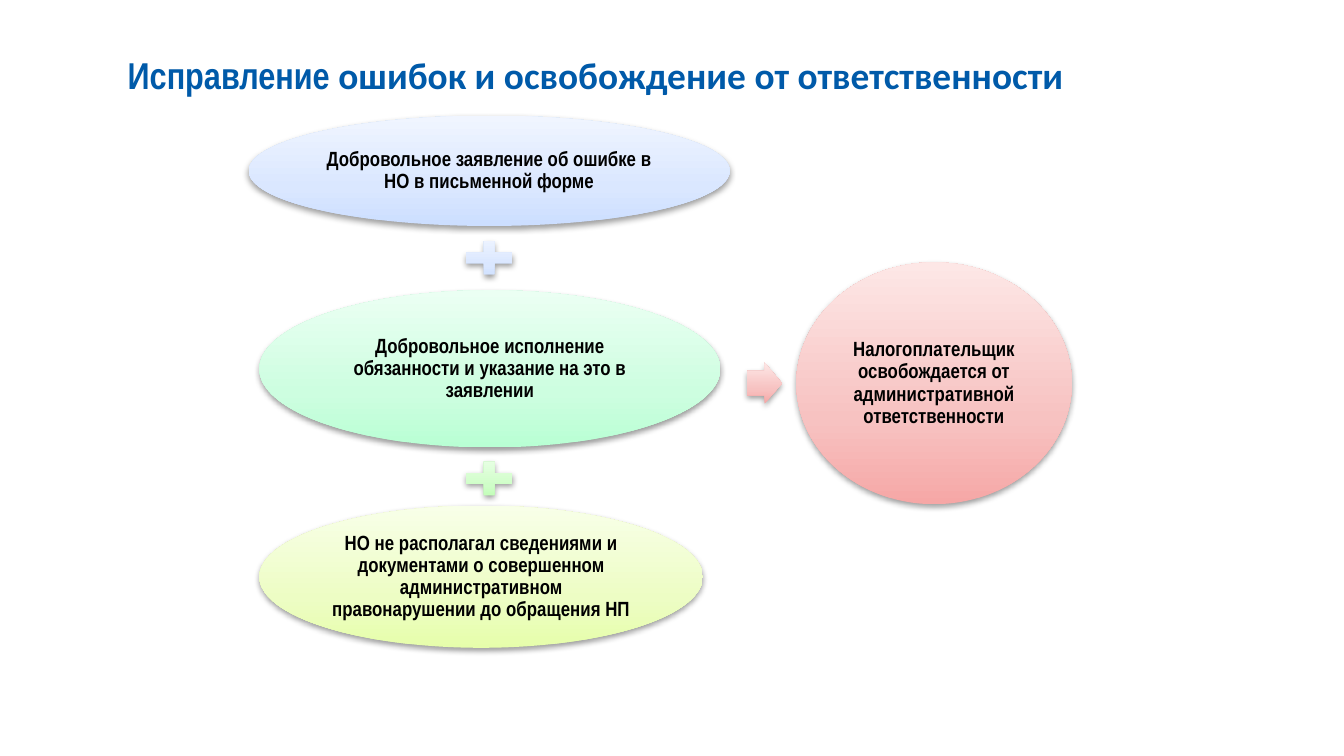
from collections import namedtuple

from lxml.etree import SubElement
from pptx import Presentation
from pptx.dml.color import RGBColor
from pptx.enum.shapes import MSO_SHAPE as Shape
from pptx.enum.text import MSO_ANCHOR as Anchor, MSO_AUTO_SIZE as AutoSize, PP_ALIGN as Align
from pptx.oxml import parse_xml
from pptx.oxml.ns import nsdecls, qn
from pptx.util import Inches, Pt

WIDTH = Inches(10)
HEIGHT = WIDTH * 9 // 16
COLUMN, ROW = WIDTH / 100, HEIGHT / 100
INSCRIBED = 0.5 ** 0.5  # share of an ellipse taken by the rectangle inside it

COLORS = {"title": "005AA9", "text": "000000", "shadow": "000000"}
GRADIENTS = {
    "blue": ("CCDEFF", "DAE7FF", "F0F5FF"),
    "mint": ("B9FFD4", "CDFEE0", "EBFFF3"),
    "green": ("BCFEB1", "CFFEC8", "ECFFE9"),
    "lime": ("E6FEAB", "EDFDC4", "F8FFE8"),
    "red": ("F6A7A6", "F7C2C1", "FDE7E6"),
}

Box = namedtuple("Box", "left top width height")


def inside(box, left, top, width, height):
    """Return a box placed relative to the corner of another, in columns and rows."""
    return Box(box.left + left, box.top + top, width, height)


def to_lengths(box):
    return (round(box.left * COLUMN), round(box.top * ROW),
            round(box.width * COLUMN), round(box.height * ROW))


def write_text(frame, spans, size, color, align, margins, before=0, after=0, line=1.0):
    """Fill a frame with one bold paragraph made of (text, font name) spans."""
    frame.word_wrap = True
    frame.auto_size = AutoSize.NONE
    frame.vertical_anchor = Anchor.MIDDLE
    frame.margin_left = frame.margin_right = Inches(margins[0])
    frame.margin_top = frame.margin_bottom = Inches(margins[1])
    para = frame.paragraphs[0]
    para.alignment = align
    para.line_spacing = line
    para.space_before, para.space_after = Pt(before), Pt(after)
    for text, font_name in spans:
        span = para.add_run()
        span.text = text
        span.font.name = font_name
        span.font.size = Pt(size)
        span.font.bold = True
        span.font.color.rgb = RGBColor.from_string(COLORS[color])


def add_glossy_shape(group, kind, box, gradient):
    """Add a shape with a vertical gradient, no outline and a soft shadow."""
    shape = group.shapes.add_shape(kind, *to_lengths(box))
    shape.line.fill.background()
    stops = "".join(
        f'<a:gs pos="{position}"><a:srgbClr val="{color}"/></a:gs>'
        for position, color in zip((0, 35000, 100000), GRADIENTS[gradient]))
    properties = shape.element.spPr
    properties.find(qn("a:prstGeom")).addnext(parse_xml(
        f'<a:gradFill {nsdecls("a")} rotWithShape="1"><a:gsLst>{stops}</a:gsLst>'
        '<a:lin ang="16200000" scaled="0"/></a:gradFill>'))
    effects = SubElement(properties, qn("a:effectLst"))
    shadow = SubElement(effects, qn("a:outerShdw"), blurRad="40000", dist="20000",
                        dir="5400000", rotWithShape="0")
    color = SubElement(shadow, qn("a:srgbClr"), val=COLORS["shadow"])
    SubElement(color, qn("a:alpha"), val="38000")
    return shape


def add_labelled_ellipse(group, box, text, gradient):
    add_glossy_shape(group, Shape.OVAL, box, gradient)
    width, height = box.width * INSCRIBED, box.height * INSCRIBED
    label_box = inside(box, (box.width - width) / 2, (box.height - height) / 2, width, height)
    label = group.shapes.add_textbox(*to_lengths(label_box))
    write_text(label.text_frame, [(text, "Arial Narrow")], size=11, color="text",
               align=Align.CENTER, margins=(0.02, 0.02), after=3.85, line=0.9)


def add_title(page, box):
    title = page.shapes.title
    title.left, title.top, title.width, title.height = to_lengths(box)
    spans = [("Исправление", "Arial Narrow"),
             (" ошибок и освобождение от ответственности", "Calibri")]
    write_text(title.text_frame, spans, size=20, color="title",
               align=Align.LEFT, margins=(0.09, 0.04), before=4, after=4)


def add_conditions(group, box):
    """Stack the three conditions, with a plus sign between neighbours."""
    conditions = [
        ("Добровольное заявление об ошибке в НО в письменной форме",
         "blue", (0, 0, box.width, 14.6)),
        ("Добровольное исполнение обязанности и указание на это в заявлении",
         "mint", (0.8, 23.1, 34.3, 20.8)),
        ("НО не располагал сведениями и документами о совершенном "
         "административном правонарушении до обращения НП",
         "lime", (0.8, 51.6, 33, 18.8)),
    ]
    for text, gradient, place in conditions:
        add_labelled_ellipse(group, inside(box, *place), text, gradient)
    for gradient, top in (("blue", 15.8), ("green", 45)):
        add_glossy_shape(group, Shape.MATH_PLUS, inside(box, 15.55, top, 4.7, 6), gradient)


def add_outcome(group, box):
    arrow = add_glossy_shape(group, Shape.RIGHT_ARROW, inside(box, 0, 13.3, 2.6, 5.4), "red")
    arrow.adjustments[0], arrow.adjustments[1] = 0.6, 0.5
    arrow.rotation = 0.3
    add_labelled_ellipse(
        group, inside(box, 3.65, 0, 20.5, box.height),
        "Налогоплательщик освобождается от административной ответственности", "red")


def main():
    deck = Presentation()
    deck.slide_width, deck.slide_height = WIDTH, HEIGHT
    page = deck.slides.add_slide(deck.slide_layouts[5])
    add_title(page, Box(8.6, 5, 85.4, 9.8))
    diagram = page.shapes.add_group_shape()
    add_conditions(diagram, Box(18.5, 15.3, 35.8, 70.4))
    add_outcome(diagram, Box(55.6, 34.7, 24.15, 32))
    deck.save("out.pptx")


if __name__ == "__main__":
    main()
